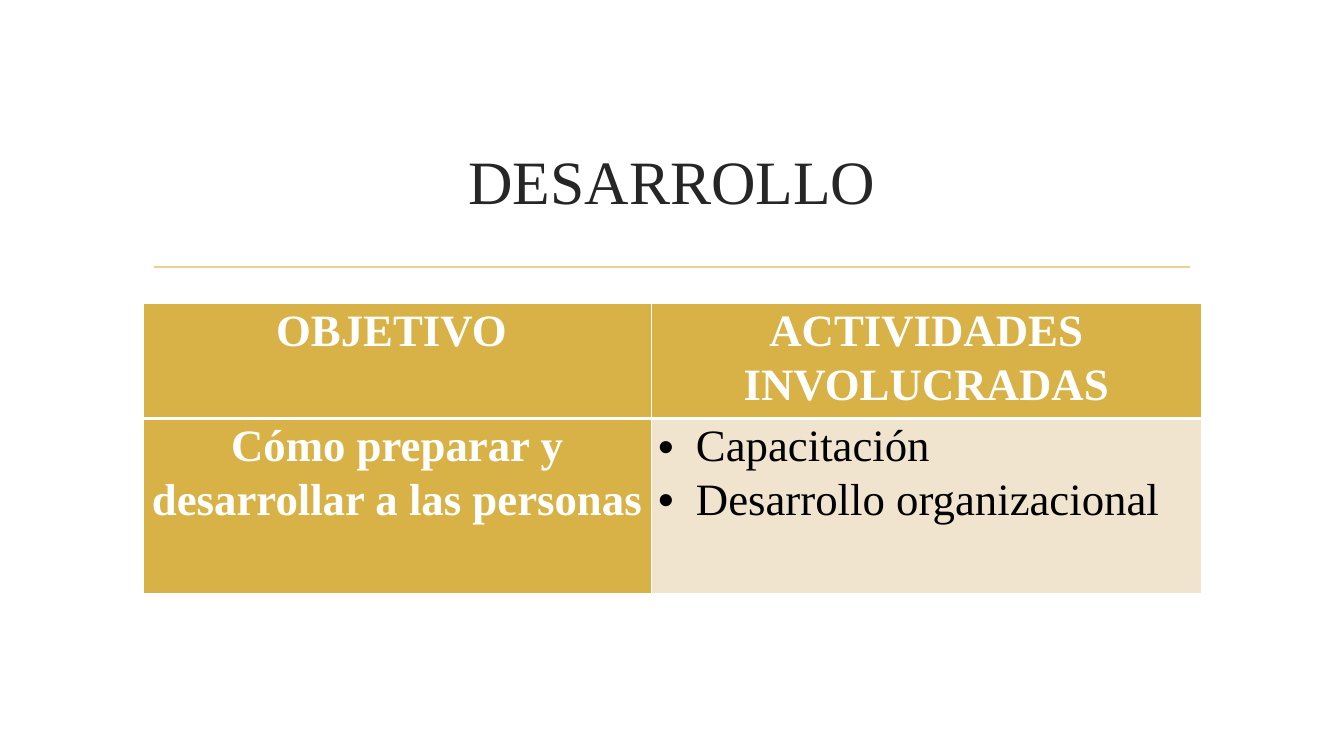
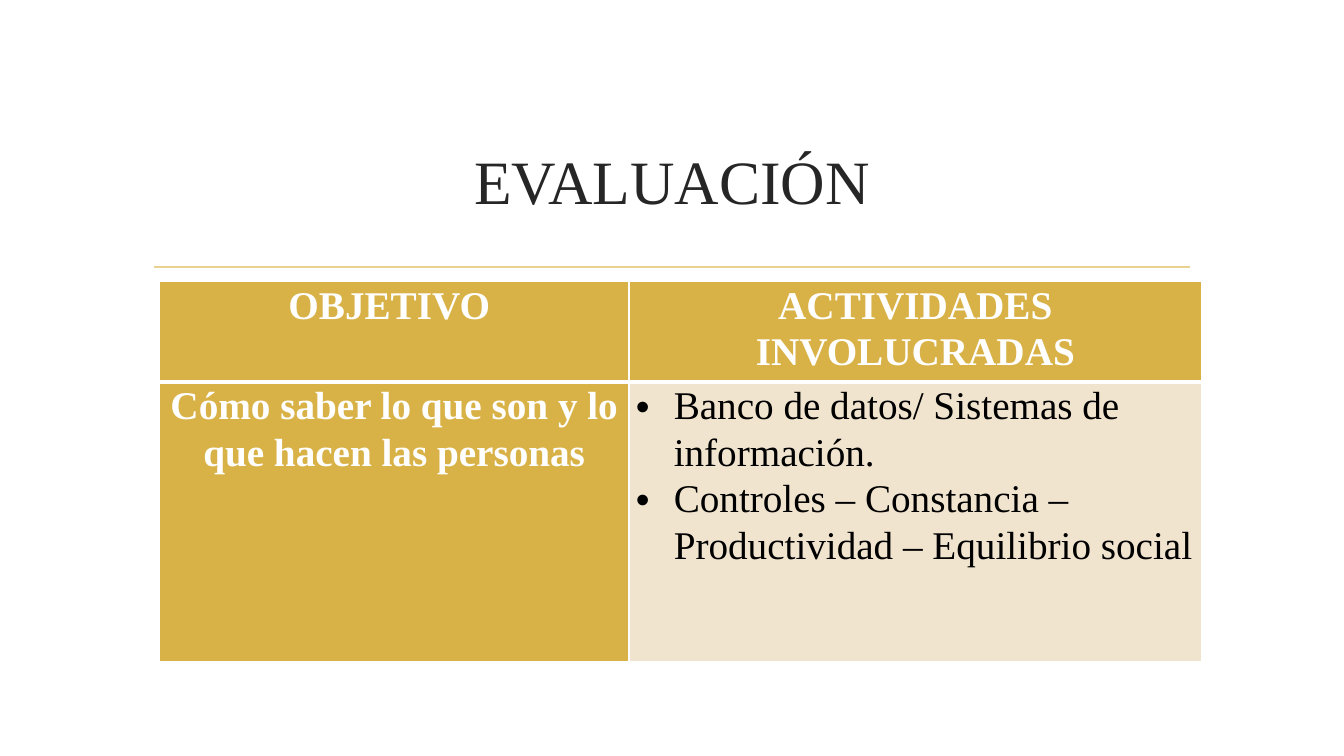
from dataclasses import dataclass

from lxml.etree import SubElement
from pptx import Presentation
from pptx.dml.color import RGBColor
from pptx.enum.shapes import MSO_CONNECTOR
from pptx.enum.text import MSO_ANCHOR, PP_ALIGN
from pptx.oxml import parse_xml
from pptx.oxml.ns import nsdecls, qn
from pptx.util import Pt

# Content: column widths, row heights and positions in points
HEADINGS = ("OBJETIVO ", "ACTIVIDADES INVOLUCRADAS")
SECTIONS = [
    {
        "title": "DESARROLLO",
        "objective": "Cómo preparar y desarrollar a las personas",
        "activities": ["Capacitación", "Desarrollo organizacional"],
        "origin": (102.24, 216.72),
        "columns": (362.88, 393.12),
        "rows": (76, 125.28),
        "size": 32,
    },
    {
        "title": "EVALUACIÓN",
        "objective": "Cómo saber lo que son y lo que hacen las personas",
        "activities": [
            "Banco de datos/ Sistemas de información.",
            "Controles – Constancia – Productividad – Equilibrio social",
        ],
        "origin": (113.76, 200.88),
        "columns": (335.52, 408.96),
        "rows": (66.5, 199.44),
        "size": 28,
    },
]


@dataclass(frozen=True)
class Theme:
    font: str = "Times New Roman"
    title: str = "262626"
    rule: str = "E8D191"
    gold: str = "D9B247"
    cream: str = "F1E4CF"
    white: str = "FFFFFF"
    black: str = "000000"
    title_size: int = 44
    line_spacing: float = 1.07
    cell_inset: float = 5
    bullet_indent: float = 27
    thin: float = 1
    thick: float = 3


THEME = Theme()
SLIDE_SIZE = (960, 540)
TITLE_BOX = (102.24, 77.04, 756, 102.96)
RULE = (110.16, 190.8, 850.32, 190.8)


def points(values):
    return [Pt(value) for value in values]


def style_font(font, size, color, bold=False):
    font.name = THEME.font
    font.size = Pt(size)
    font.bold = bold
    font.color.rgb = RGBColor.from_string(color)


# Title and rule shared by every slide
def add_heading(slide, title):
    rule = slide.shapes.add_connector(MSO_CONNECTOR.STRAIGHT, *points(RULE))
    rule.line.color.rgb = RGBColor.from_string(THEME.rule)
    rule.line.width = Pt(1.25)
    SubElement(rule._element.spPr, qn("a:effectLst"))

    frame = slide.shapes.add_textbox(*points(TITLE_BOX)).text_frame
    frame.word_wrap = True
    frame.vertical_anchor = MSO_ANCHOR.MIDDLE
    frame.text = title
    heading = frame.paragraphs[0]
    heading.alignment = PP_ALIGN.CENTER
    style_font(heading.runs[0].font, THEME.title_size, THEME.title)


# Table cells
def set_borders(cell, is_header):
    widths = {"L": THEME.thin, "R": THEME.thin,
              "T": THEME.thin if is_header else THEME.thick,
              "B": THEME.thick if is_header else THEME.thin}
    properties = cell._tc.get_or_add_tcPr()
    for index, (side, width) in enumerate(widths.items()):
        properties.insert(index, parse_xml(
            f'<a:ln{side} {nsdecls("a")} w="{Pt(width)}"><a:solidFill>'
            f'<a:srgbClr val="{THEME.white}"/></a:solidFill></a:ln{side}>'))


def add_bullet(paragraph):
    properties = paragraph._p.get_or_add_pPr()
    properties.set("marL", str(Pt(THEME.bullet_indent)))
    properties.set("indent", str(-Pt(THEME.bullet_indent)))
    SubElement(properties, qn("a:buFont"), typeface="Arial")
    SubElement(properties, qn("a:buChar"), char="•")


def fill_cell(cell, lines, size, is_header, is_list):
    cell.margin_left = cell.margin_right = Pt(THEME.cell_inset)
    cell.margin_top = cell.margin_bottom = 0
    cell.fill.solid()
    cell.fill.fore_color.rgb = RGBColor.from_string(
        THEME.cream if is_list else THEME.gold)
    set_borders(cell, is_header)
    cell.text_frame.text = "\n".join(lines)
    for paragraph in cell.text_frame.paragraphs:
        paragraph.line_spacing = THEME.line_spacing
        if is_list:
            add_bullet(paragraph)
        else:
            paragraph.alignment = PP_ALIGN.CENTER
        style_font(paragraph.runs[0].font, size,
                   THEME.black if is_list else THEME.white, not is_list)


def add_section_table(slide, section):
    columns, rows = section["columns"], section["rows"]
    table = slide.shapes.add_table(
        len(rows), len(columns),
        *points((*section["origin"], sum(columns), sum(rows)))).table
    for column, width in zip(table.columns, columns):
        column.width = Pt(width)
    for row, height in zip(table.rows, rows):
        row.height = Pt(height)

    content = ([[heading] for heading in HEADINGS],
               [[section["objective"]], section["activities"]])
    for r, row_content in enumerate(content):
        for c, lines in enumerate(row_content):
            fill_cell(table.cell(r, c), lines, section["size"],
                      is_header=r == 0, is_list=r == 1 and c == 1)


def main():
    deck = Presentation()
    deck.slide_width, deck.slide_height = points(SLIDE_SIZE)
    for section in SECTIONS:
        slide = deck.slides.add_slide(deck.slide_layouts[6])
        add_heading(slide, section["title"])
        add_section_table(slide, section)
    deck.save("out.pptx")


if __name__ == "__main__":
    main()
